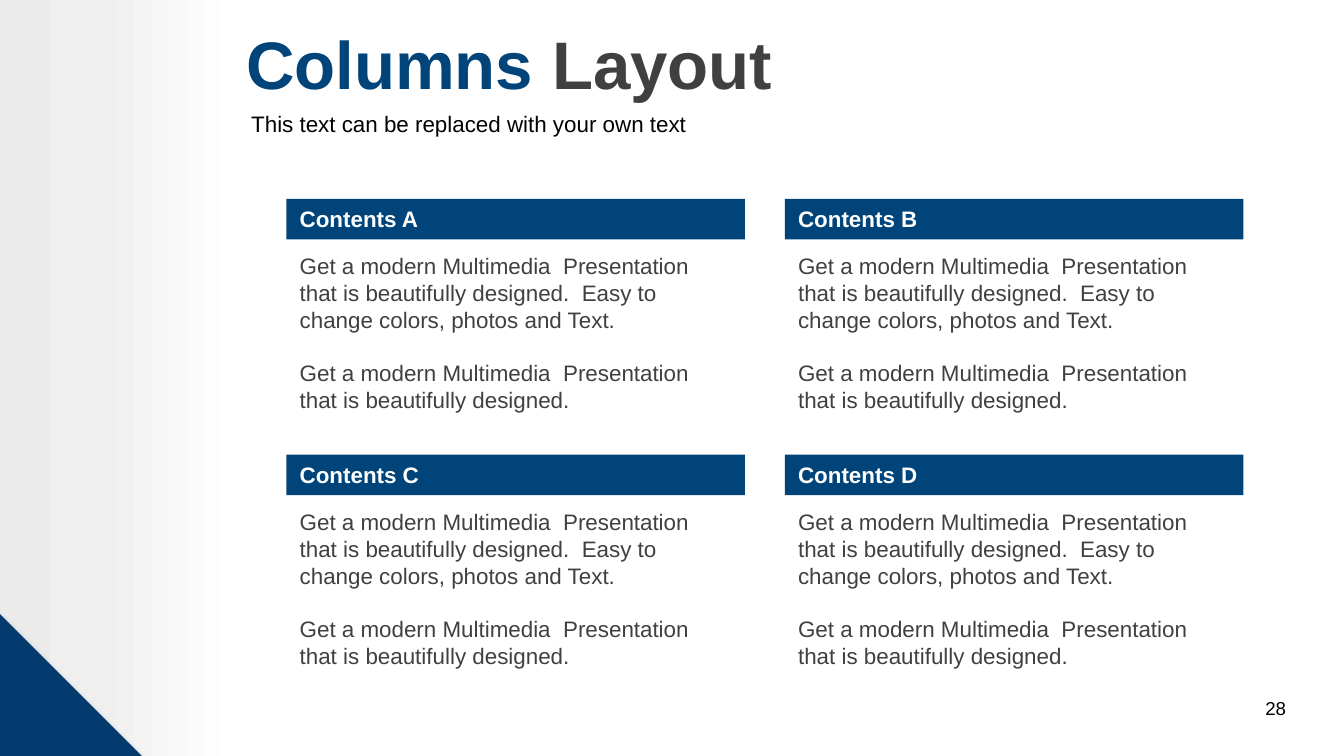
from itertools import product
from lxml.etree import SubElement
from pptx import Presentation
from pptx.dml.color import RGBColor
from pptx.enum.shapes import MSO_SHAPE as Shape
from pptx.enum.text import MSO_ANCHOR as Anchor, PP_ALIGN as Align
from pptx.oxml import parse_xml
from pptx.oxml.ns import nsdecls, qn
from pptx.util import Pt

NAVY, GRAY, WHITE, BLACK = "004479", "404040", "FFFFFF", "000000"
BODY = [
    "Get a modern Multimedia  Presentation that is beautifully designed.  "
    "Easy to change colors, photos and Text.",
    "Get a modern Multimedia  Presentation that is beautifully designed.",
]


def color(value):
    """Turn a hex string into a colour."""
    return RGBColor.from_string(value)


class SlideBuilder:
    """Hold the text style and the slide being built."""

    style = {"name": "Arial", "size": Pt(12), "bold": False}

    def __init__(self, slide):
        """Keep the slide to draw on."""
        self.slide = slide

    def place(self, shape, box):
        """Set the position and size in points."""
        for key, value in zip(("left", "top", "width", "height"), box):
            setattr(shape, key, Pt(value))

    def run(self, paragraph, text, fill, **changes):
        """Add one formatted run."""
        font_run = paragraph.add_run()
        font_run.text = text
        for key, value in {**self.style, **changes}.items():
            setattr(font_run.font, key, value)
        font_run.font.color.rgb = color(fill)

    def title(self, box, parts):
        """Fill the title placeholder with coloured parts."""
        shape = self.slide.shapes.title
        self.place(shape, box)
        frame = shape.text_frame
        frame.word_wrap = True
        frame.vertical_anchor = Anchor.MIDDLE
        paragraph = frame.paragraphs[0]
        paragraph.alignment = Align.LEFT
        for text, fill in parts:
            self.run(paragraph, text, fill, size=Pt(36), bold=True)

    def set_text(self, shape, texts, fill, align=Align.LEFT, gap=14, **changes):
        """Put paragraphs into a shape from its top."""
        frame = shape.text_frame
        frame.word_wrap = True
        frame.vertical_anchor = Anchor.TOP
        for index, text in enumerate(texts):
            paragraph = frame.add_paragraph() if index else frame.paragraphs[0]
            paragraph.alignment = align
            paragraph.space_before = Pt(gap if index else 0)
            self.run(paragraph, text, fill, **changes)

    def text(self, box, texts, fill, **changes):
        """Add a text box."""
        shape = self.slide.shapes.add_textbox(*map(Pt, box))
        self.set_text(shape, texts, fill, **changes)

    def block(self, kind, box, fill):
        """Add a plain filled shape."""
        shape = self.slide.shapes.add_shape(kind, *map(Pt, box))
        shape.shadow.inherit = False
        shape.fill.solid()
        shape.fill.fore_color.rgb = color(fill)
        shape.line.fill.background()
        return shape

    def gradient(self, box, stops):
        """Add a rectangle that fades from left to right."""
        shape = self.block(Shape.RECTANGLE, box, WHITE)
        shape.fill.gradient()
        shape.fill.gradient_angle = 0
        stop_list = shape.element.spPr.find(qn("a:gradFill")).find(qn("a:gsLst"))
        for stop in list(stop_list):
            stop_list.remove(stop)
        for position, value in stops:
            stop = SubElement(stop_list, qn("a:gs"), pos=str(position * 1000))
            SubElement(stop, qn("a:srgbClr"), val=value)

    def corner(self, box, fill):
        """Add the corner triangle with a soft shadow."""
        shape = self.block(Shape.RIGHT_TRIANGLE, box, fill)
        effects = shape.element.spPr.find(qn("a:effectLst"))
        effects.append(parse_xml(
            f'<a:outerShdw {nsdecls("a")} blurRad="{Pt(3.1)}" dist="{Pt(1.8)}" '
            'dir="5400000" rotWithShape="0"><a:srgbClr val="000000">'
            '<a:alpha val="35000"/></a:srgbClr></a:outerShdw>'))

    def panel(self, left, top, heading):
        """Add a heading bar with its body text."""
        width = 245.6
        self.text((left, top + 25.2, width, 123.8), BODY, GRAY)
        bar = self.block(Shape.RECTANGLE, (left, top, width, 21.8), NAVY)
        self.set_text(bar, [heading], WHITE, bold=True)


def main():
    """Build and save the slide."""
    presentation = Presentation()
    presentation.slide_width, presentation.slide_height = Pt(720), Pt(405)
    slide = presentation.slides.add_slide(presentation.slide_layouts[5])
    builder = SlideBuilder(slide)
    builder.gradient((0, 0, 127.5, 405),
                     [(0, "EBEBEB"), (42, "EFEFEF"), (100, WHITE)])
    builder.corner((-0.6, 328.4, 77, 77), "053A6F")
    builder.title((124.6, 2.9, 595.4, 61.2),
                  [("Columns", NAVY), (" Layout", GRAY)])
    for letter, (top, left) in zip("ABCD", product((106.5, 243.5), (153.5, 420.5))):
        builder.panel(left, top, f"Contents {letter}")
    builder.text((127.5, 55.4, 592.5, 21),
                 ["This text can be replaced with your own text"], BLACK)
    builder.text((528, 370, 168, 21.6), ["28"], BLACK,
                 align=Align.RIGHT, size=Pt(10))
    presentation.save("out.pptx")


if __name__ == "__main__":
    main()
